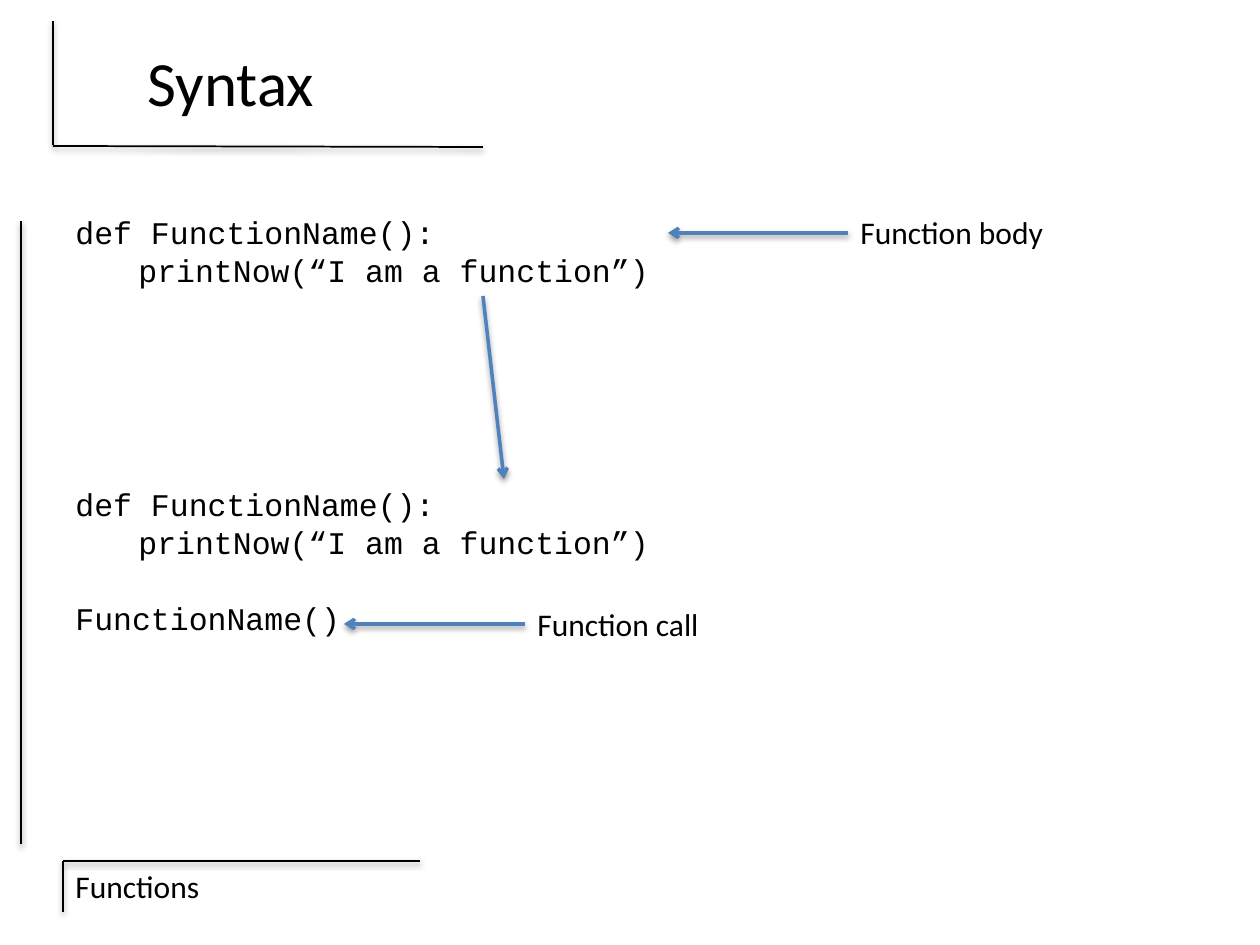
import pptx
import pptx.util
import pptx.dml.color
import pptx.enum.shapes
import pptx.enum.text
import pptx.oxml
import pptx.oxml.ns

PX = 914400 // 126


def write(frame, text, font="Calibri", size=18, color="000000", indent=0, before=0, align="LEFT", first=True):
    para = frame.paragraphs[0] if first else frame.add_paragraph()
    para.alignment = getattr(pptx.enum.text.PP_ALIGN, align)
    para.space_before = pptx.util.Pt(before)
    if indent:
        para._p.get_or_add_pPr().set("marL", str(indent * PX))
    run = para.add_run()
    run.text = text
    run.font.name = font
    run.font.size = pptx.util.Pt(size)
    run.font.color.rgb = pptx.dml.color.RGBColor.from_string(color)


deck = pptx.Presentation()
deck.slide_width = pptx.util.Inches(10)
deck.slide_height = pptx.util.Inches(7.5)
slide = deck.slides.add_slide(deck.slide_layouts[5])

title = slide.shapes.title
title.left, title.top, title.width, title.height = 63 * PX, 21 * PX, 336 * PX, 120 * PX
title.text_frame.vertical_anchor = pptx.enum.text.MSO_ANCHOR.MIDDLE
write(title.text_frame, "Syntax", size=36, align="CENTER")

rules = [
    (420, 861, 63, 861),
    (21, 221, 21, 844),
    (63, 861, 63, 912),
    (483, 147, 53, 146),
    (53, 21, 53, 145),
]
arrows = [
    (483, 296, 504, 479),
    (525, 624, 344, 624),
    (848, 233, 668, 233),
]
shadow = (
    f'<a:effectLst {pptx.oxml.ns.nsdecls("a")}>'
    '<a:outerShdw blurRad="40000" dist="20000" dir="5400000" rotWithShape="0">'
    '<a:srgbClr val="000000"><a:alpha val="38000"/></a:srgbClr>'
    '</a:outerShdw></a:effectLst>'
)
head = f'<a:tailEnd {pptx.oxml.ns.nsdecls("a")} type="arrow"/>'
for group, color, width in ((rules, "000000", 1), (arrows, "4F81BD", 2)):
    for ends in group:
        line = slide.shapes.add_connector(
            pptx.enum.shapes.MSO_CONNECTOR.STRAIGHT, *(n * PX for n in ends))
        line.line.color.rgb = pptx.dml.color.RGBColor.from_string(color)
        line.line.width = pptx.util.Pt(width)
        if group is arrows:
            line.line._get_or_add_ln().append(pptx.oxml.parse_xml(head))
        line._element.spPr.append(pptx.oxml.parse_xml(shadow))

code = {"font": "Courier New"}
body = [
    ("def FunctionName():", code),
    ("printNow(“I am a function”)", {**code, "indent": 63}),
]
call = [("FunctionName()", {**code, "before": 22})]
boxes = [
    (63, 861, 305, 50, [("Functions", {})]),
    (63, 207, 605, 89, body),
    (63, 479, 605, 165, body + call),
    (525, 599, 188, 50, [("Function call", {})]),
    (848, 207, 210, 50, [("Function body", {})]),
]
for left, top, width, height, lines in boxes:
    box = slide.shapes.add_textbox(left * PX, top * PX, width * PX, height * PX)
    frame = box.text_frame
    frame.word_wrap = left == 63
    frame.auto_size = pptx.enum.text.MSO_AUTO_SIZE.SHAPE_TO_FIT_TEXT
    for row, (text, style) in enumerate(lines):
        write(frame, text, first=row == 0, **style)

deck.save("out.pptx")
